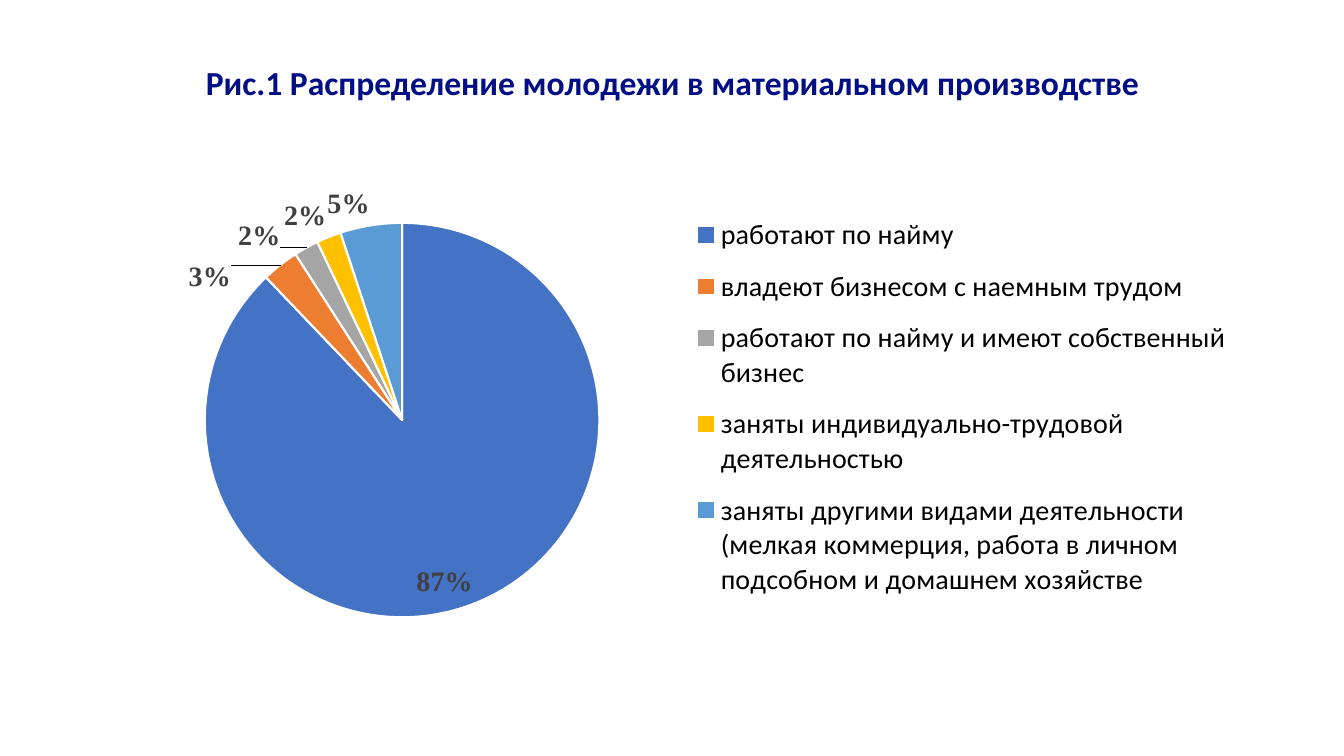
"""Build a slide with a pie chart of young people's employment in material production."""
from typing import NamedTuple

import pptx
import pptx.chart.data
import pptx.chart.series
import pptx.dml.color
import pptx.enum.chart
import pptx.enum.text
import pptx.oxml
import pptx.oxml.ns
import pptx.slide
import pptx.text.text
import pptx.util
from pptx.dml.color import RGBColor
from pptx.enum.chart import XL_LABEL_POSITION
from pptx.util import Inches

NAVY = RGBColor(0x02, 0x0E, 0x84)
BLACK = RGBColor(0, 0, 0)
WHITE = RGBColor(255, 255, 255)
DARK_GREY = RGBColor(0x40, 0x40, 0x40)
BLUE = RGBColor(0x44, 0x72, 0xC4)
ORANGE = RGBColor(0xED, 0x7D, 0x31)
GREY = RGBColor(0xA5, 0xA5, 0xA5)
GOLD = RGBColor(0xFF, 0xC0, 0x00)
SKY = RGBColor(0x5B, 0x9B, 0xD5)
PERCENT = '0"%"'


class Slice(NamedTuple):
    """One pie slice, with its label position and shift as fractions of the chart."""

    name: str
    share: int
    color: RGBColor
    position: XL_LABEL_POSITION = XL_LABEL_POSITION.OUTSIDE_END
    shift: tuple[float, float] | None = None


SLICES = [
    Slice("работают по найму", 87, BLUE, XL_LABEL_POSITION.INSIDE_END),
    Slice("владеют бизнесом с наемным трудом", 3, ORANGE, shift=(-0.04, 0.07)),
    Slice("работают по найму и имеют собственный бизнес", 2, GREY, shift=(-0.02, 0.02)),
    Slice("заняты индивидуально-трудовой деятельностью", 2, GOLD),
    Slice("заняты другими видами деятельности (мелкая коммерция, "
          "работа в личном подсобном и домашнем хозяйстве", 5, SKY),
]


def style_font(font: pptx.text.text.Font, name: str, size: float,
               color: RGBColor, bold: bool = False) -> None:
    """Set the typeface, size, colour and weight of a font."""
    font.name = name
    font.size = pptx.util.Pt(size)
    font.color.rgb = color
    font.bold = bold


def place(parent, index: int, x: float, y: float,
          size: tuple[float, float] | None = None, inner: bool = False) -> None:
    """Insert a manual layout; with a size, x and y are chart-edge positions."""
    tags = [("layoutTarget", "inner")] if inner else []
    if size:
        tags += [("xMode", "edge"), ("yMode", "edge")]
    tags += [("x", x), ("y", y)]
    if size:
        tags += [("w", size[0]), ("h", size[1])]
    body = "".join(f'<c:{tag} val="{value}"/>' for tag, value in tags)
    for old in parent.findall(pptx.oxml.ns.qn("c:layout")):
        parent.remove(old)
    parent.insert(index, pptx.oxml.parse_xml(
        f'<c:layout {pptx.oxml.ns.nsdecls("c")}><c:manualLayout>{body}'
        '</c:manualLayout></c:layout>'))


def add_title(page: pptx.slide.Slide, text: str) -> None:
    """Add the centred slide heading."""
    box = page.shapes.add_textbox(Inches(0.92), Inches(0.4), Inches(11.5), Inches(0.87))
    frame = box.text_frame
    frame.word_wrap = True
    frame.vertical_anchor = pptx.enum.text.MSO_ANCHOR.MIDDLE
    para = frame.paragraphs[0]
    para.alignment = pptx.enum.text.PP_ALIGN.CENTER
    para.line_spacing = 0.9
    span = para.add_run()
    span.text = text
    style_font(span.font, "Calibri", 24, NAVY, bold=True)


def style_slice(series: pptx.chart.series.PieSeries, index: int, part: Slice) -> None:
    """Colour one slice and place its label."""
    point = series.points[index]
    point.format.fill.solid()
    point.format.fill.fore_color.rgb = part.color
    point.format.line.color.rgb = WHITE
    point.format.line.width = pptx.util.Pt(1.5)
    label = point.data_label
    style_font(label.font, "Times New Roman", 20, DARK_GREY, bold=True)
    label.position = part.position
    if part.shift:
        element = series.data_labels._element.xpath(f'c:dLbl[c:idx/@val="{index}"]')[0]
        place(element, 1, *part.shift)


def add_pie(page: pptx.slide.Slide) -> None:
    """Add the pie chart with its legend and labels."""
    data = pptx.chart.data.CategoryChartData(number_format=PERCENT)
    data.categories = [part.name for part in SLICES]
    data.add_series("Series 1", [part.share for part in SLICES])
    chart = page.shapes.add_chart(
        pptx.enum.chart.XL_CHART_TYPE.PIE,
        Inches(1.06), Inches(1.72), Inches(11.22), Inches(4.55), data).chart
    chart.has_title = False
    style_font(chart.font, "Calibri", 10, BLACK)
    chart.has_legend = True
    legend = chart.legend
    legend.position = pptx.enum.chart.XL_LEGEND_POSITION.RIGHT
    legend.include_in_layout = False
    style_font(legend.font, "Calibri", 20, BLACK)
    place(legend._element, 1, 0.52, 0.06, (0.48, 0.9))
    plot = chart.plots[0]
    plot.vary_by_categories = True
    place(chart._chartSpace.chart.plotArea, 0, 0.086, 0.108, (0.35, 0.86), inner=True)
    series = plot.series[0]
    labels = series.data_labels
    labels.number_format = PERCENT
    labels.number_format_is_linked = False
    labels.show_value = True
    labels.position = XL_LABEL_POSITION.OUTSIDE_END
    style_font(labels.font, "Times New Roman", 20, DARK_GREY, bold=True)
    for index, part in enumerate(SLICES):
        style_slice(series, index, part)


def main() -> None:
    """Create and save the deck."""
    deck = pptx.Presentation()
    deck.slide_width = Inches(13.33)
    deck.slide_height = Inches(7.5)
    page = deck.slides.add_slide(deck.slide_layouts[6])
    add_title(page, "Рис.1 Распределение молодежи в материальном производстве")
    add_pie(page)
    deck.save("out.pptx")


if __name__ == "__main__":
    main()
